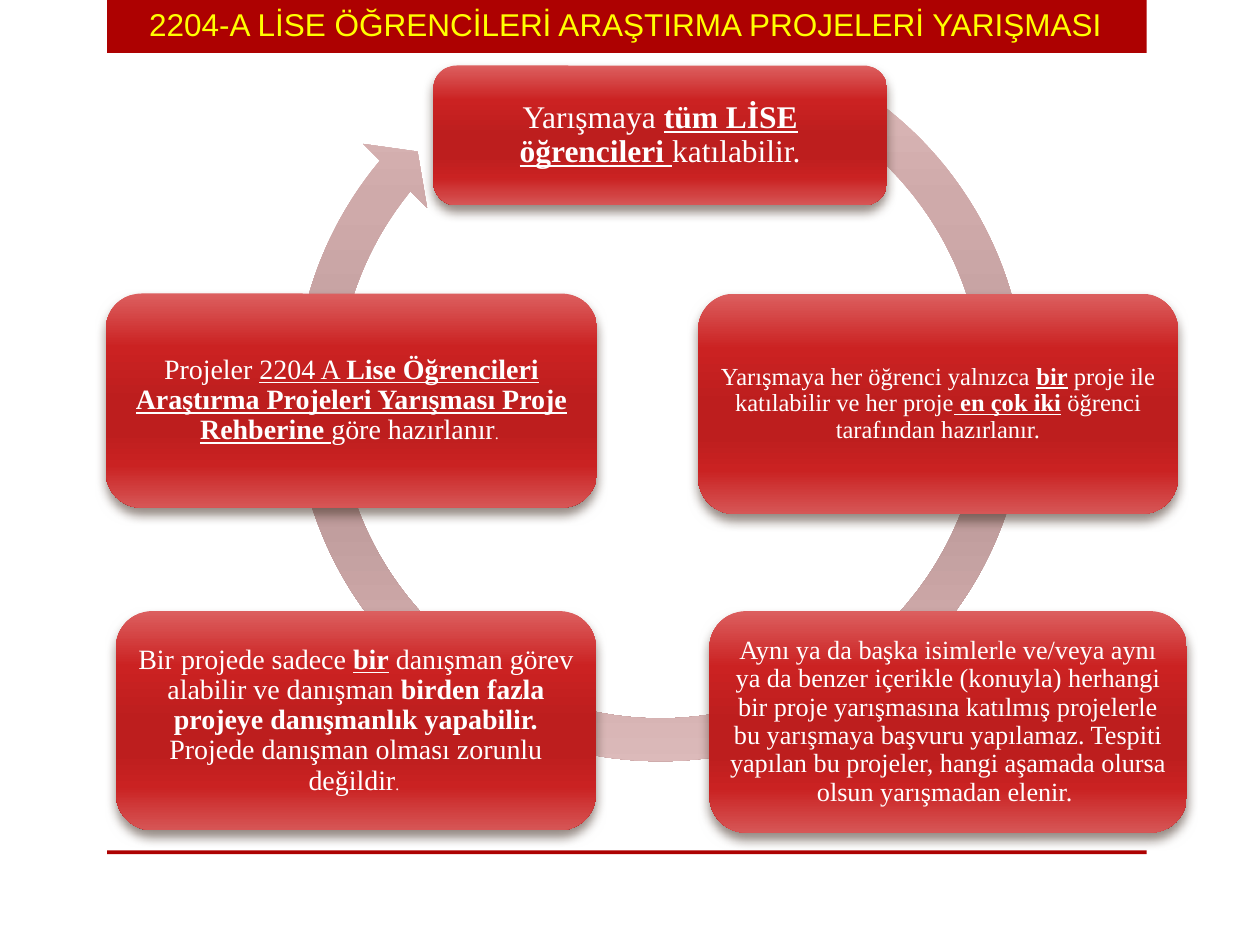
from pptx import Presentation
from pptx.dml.color import RGBColor as RGB
from pptx.enum.shapes import MSO_SHAPE as Kind
from pptx.enum.text import MSO_ANCHOR as Anchor, PP_ALIGN as Align
from pptx.oxml import parse_xml
from pptx.oxml.ns import nsdecls, qn
from pptx.util import Inches, Pt

HEX = {"bar": "AD0101", "title": "FFFF00", "text": "FFFFFF", "shade": "4E3B30"}
STOPS = (0, 25, 50, 65, 80, 100)
RED = ("DC5F5F", "CB2222", "BD1E1E", "BD1E1E", "CA2222", "D65656")
ROSE = ("E4C2C2", "CFAAAA", "BF9C9C", "BF9C9C", "CEA9A9", "DEBCBC")

TITLE = "2204-A LİSE ÖĞRENCİLERİ ARAŞTIRMA PROJELERİ YARIŞMASI"
BARS = [(0.85, 0, 8.25, 0.42), (0.85, 6.75, 8.25, 0.03)]
RING = (2.15, 0.05, 6.18, 6.18)
BEND = (0.055, 3.307, 131.792, 177.609, 0.058)

# Place, text size, inset, runs as (text, style): b bold, u underlined, s small
CARDS = [
    ((3.44, 0.52, 3.6, 1.11), 18, 0.07, [
        ("Yarışmaya ", ""), ("tüm LİSE öğrencileri ", "bu"), ("katılabilir.", "")]),
    ((5.54, 2.33, 3.81, 1.75), 14, 0.06, [
        ("Yarışmaya her öğrenci yalnızca ", ""), ("bir", "bu"),
        (" proje ile katılabilir ve her proje", ""), (" ", "u"),
        ("en çok iki", "bu"), (" öğrenci tarafından hazırlanır.", "")]),
    ((5.63, 4.85, 3.79, 1.76), 15, 0.06, [
        ("Aynı ya da başka isimlerle ve/veya aynı ya da benzer içerikle (konuyla) "
         "herhangi bir proje yarışmasına katılmış projelerle bu yarışmaya başvuru "
         "yapılamaz. Tespiti yapılan bu projeler, hangi aşamada olursa olsun "
         "yarışmadan elenir. ", "")]),
    ((0.92, 4.85, 3.81, 1.74), 16, 0.07, [
        ("Bir projede sadece ", ""), ("bir", "bu"),
        (" danışman görev alabilir ve danışman ", ""),
        ("birden fazla projeye danışmanlık yapabilir.", "b"),
        (" Projede danışman olması zorunlu değildir", ""), (". ", "s")]),
    ((0.84, 2.33, 3.9, 1.7), 16, 0.07, [
        ("Projeler ", ""), ("2204 A ", "u"),
        ("Lise Öğrencileri Araştırma Projeleri Yarışması Proje Rehberine ", "bu"),
        ("göre hazırlanır", ""), (". ", "s")]),
]


def put(item, **vals):
    for key, val in vals.items():
        setattr(item, key, val)


def draw(kind, place):
    shape = slide.shapes.add_shape(kind, *map(Inches, place))
    shape.line.fill.background()
    shape.shadow.inherit = False
    return shape


def blend(shape, tones):
    """Fill the shape from top to bottom with the tones at STOPS."""
    shape.fill.gradient()
    shape.fill.gradient_angle = 270
    old = shape._element.spPr.find(".//" + qn("a:gsLst"))
    marks = "".join(f'<a:gs pos="{pos * 1000}"><a:srgbClr val="{tone}"/></a:gs>'
                    for pos, tone in zip(STOPS, tones))
    old.getparent().replace(
        old, parse_xml(f'<a:gsLst {nsdecls("a")}>{marks}</a:gsLst>'))


def shade(shape):
    """Add a soft shadow just below the shape."""
    shape._element.spPr.find(qn("a:effectLst")).append(parse_xml(
        f'<a:outerShdw {nsdecls("a")} blurRad="{Pt(6)}" dist="{Pt(4)}" '
        f'dir="5400000" rotWithShape="0"><a:srgbClr val="{HEX["shade"]}">'
        '<a:alpha val="60000"/></a:srgbClr></a:outerShdw>'))


def write(frame, runs, size, face, tone, inset, gap=1.0):
    put(frame, word_wrap=True, vertical_anchor=Anchor.MIDDLE,
        **{f"margin_{side}": Inches(inset)
           for side in ("left", "top", "right", "bottom")})
    para = frame.paragraphs[0]
    put(para, alignment=Align.CENTER, line_spacing=gap)
    for text, style in runs:
        run = para.add_run()
        run.text = text
        put(run.font, name=face, size=Pt(9 if "s" in style else size),
            bold="b" in style, underline="u" in style)
        run.font.color.rgb = RGB.from_string(HEX[tone])


deck = Presentation()
put(deck, slide_width=Inches(10), slide_height=Inches(7.5))
slide = deck.slides.add_slide(deck.slide_layouts[5])

for place in BARS:
    bar = draw(Kind.RECTANGLE, place)
    bar.fill.solid()
    bar.fill.fore_color.rgb = RGB.from_string(HEX["bar"])

title = slide.shapes.title
put(title, left=Inches(0.83), top=Inches(-0.01),
    width=Inches(8.27), height=Inches(0.4))
write(title.text_frame, [(TITLE, "")], 18, "Arial", "title", 0.05)
slide.shapes._spTree.append(title._element)  # in front of the bars

ring = draw(Kind.CIRCULAR_ARROW, RING)
for num, val in enumerate(BEND):
    ring.adjustments[num] = val
blend(ring, ROSE)

for place, size, inset, runs in CARDS:
    card = draw(Kind.ROUNDED_RECTANGLE, place)
    blend(card, RED)
    shade(card)
    write(card.text_frame, runs, size, "Times New Roman", "text", inset, 0.9)

deck.save("out.pptx")
